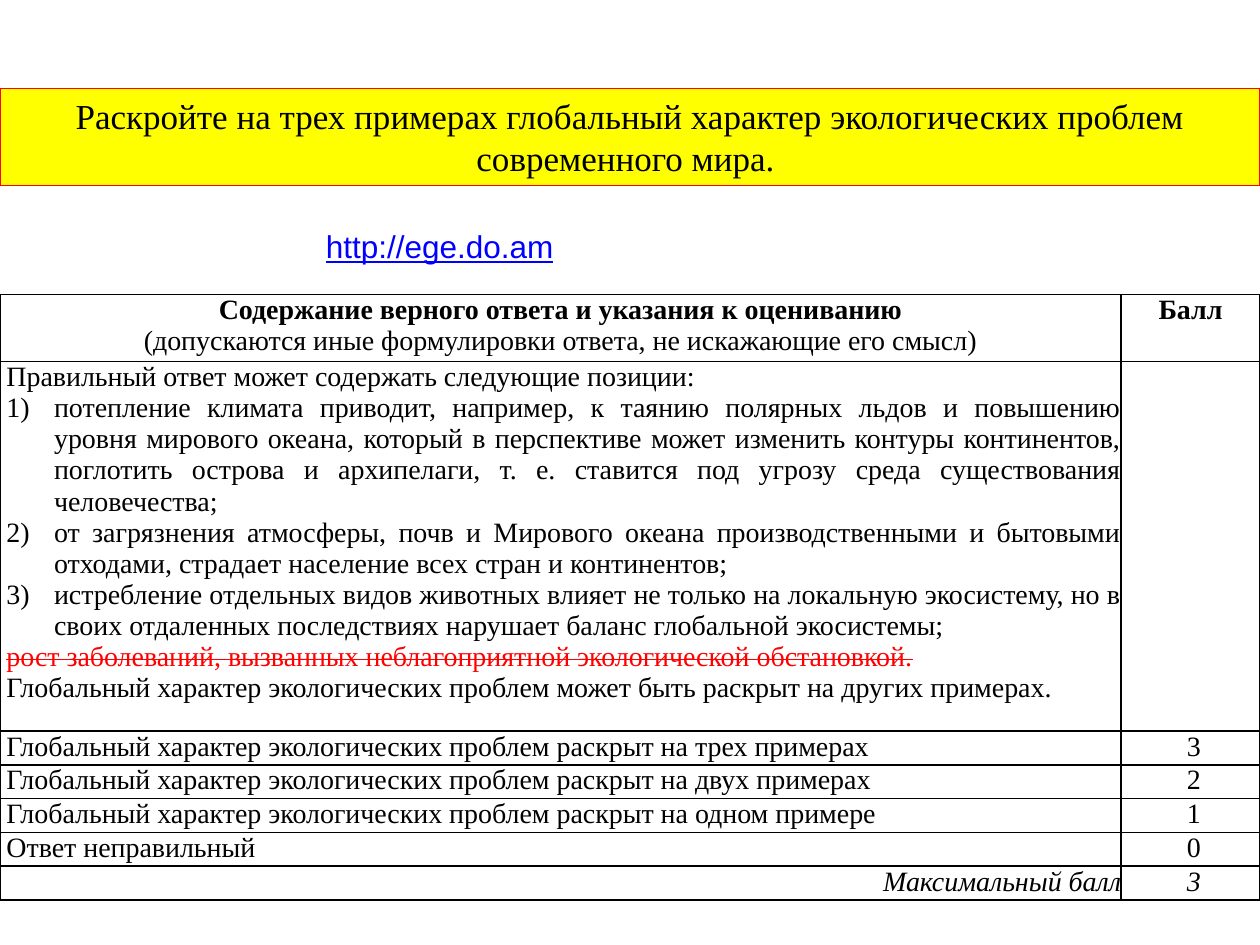
from lxml import etree
from pptx import Presentation
from pptx.dml.color import RGBColor
from pptx.enum.shapes import MSO_SHAPE
from pptx.enum.text import MSO_ANCHOR, MSO_AUTO_SIZE, PP_ALIGN
from pptx.oxml.ns import qn
from pptx.util import Cm, Pt

RECTANGLE = MSO_SHAPE.RECTANGLE
MIDDLE = MSO_ANCHOR.MIDDLE
FIT_SHAPE = MSO_AUTO_SIZE.SHAPE_TO_FIT_TEXT
LEFT, CENTER, RIGHT, JUSTIFY = (
    PP_ALIGN.LEFT, PP_ALIGN.CENTER, PP_ALIGN.RIGHT, PP_ALIGN.JUSTIFY)

COLORS = {"ink": "000000", "banner": "FFFF00", "accent": "FF0000", "link": "0000FF"}
SERIF, SANS = "Times New Roman", "Arial"
SLIDE_WIDTH, SLIDE_HEIGHT = Cm(25.4), Cm(19.05)

TASK = ("Раскройте на трех примерах глобальный характер "
        "экологических проблем современного мира. ")
POSITIONS = [
    "потепление климата приводит, например, к таянию полярных льдов и повышению "
    "уровня мирового океана, который в перспективе может изменить контуры континентов, "
    "поглотить острова и архипелаги, т. е. ставится под угрозу среда существования "
    "человечества;",
    "от загрязнения атмосферы, почв и Мирового океана производственными и бытовыми "
    "отходами, страдает население всех стран и континентов;",
    "истребление отдельных видов животных влияет не только на локальную экосистему, "
    "но в своих отдаленных последствиях нарушает баланс глобальной экосистемы; ",
]
REVEALED = "Глобальный характер экологических проблем раскрыт на "
GRADES = [
    (REVEALED + "трех примерах", "3"),
    (REVEALED + "двух примерах", "2"),
    (REVEALED + "одном примере", "1"),
    ("Ответ неправильный", "0"),
]


def rgb(name):
    return RGBColor.from_string(COLORS[name])


def add_run(paragraph, text, size=16, face=SERIF, color="ink",
            bold=False, italic=False, underline=False, strike=False):
    run = paragraph.add_run()
    run.text = text
    font = run.font
    font.size, font.name = Pt(size), face
    font.bold, font.italic, font.underline = bold, italic, underline
    font.color.rgb = rgb(color)
    if strike:
        run._r.get_or_add_rPr().set("strike", "sngStrike")


def add_line(frame, text, align=LEFT, numbered=False, **style):
    paragraph = frame.paragraphs[0]
    if paragraph.runs:
        paragraph = frame.add_paragraph()
    paragraph.alignment = align
    if numbered:
        properties = paragraph._p.get_or_add_pPr()
        properties.set("marL", str(Cm(0.96)))
        properties.set("indent", str(-Cm(0.96)))
        etree.SubElement(properties, qn("a:buAutoNum"), type="arabicParenR")
    add_run(paragraph, text, **style)


def format_cell(cell, right_margin):
    cell.margin_left, cell.margin_right = Cm(0.13), right_margin
    cell.margin_top = cell.margin_bottom = 0
    properties = cell._tc.get_or_add_tcPr()
    for side in ("a:lnL", "a:lnR", "a:lnT", "a:lnB"):
        border = etree.SubElement(properties, qn(side), w=str(Pt(1)))
        fill = etree.SubElement(border, qn("a:solidFill"))
        etree.SubElement(fill, qn("a:srgbClr"), val=COLORS["ink"])
    cell.fill.background()


def add_criteria(slide):
    heights = [Cm(1.35), Cm(7.45)] + [Cm(0.68)] * (len(GRADES) + 1)
    table = slide.shapes.add_table(
        len(heights), 2, 0, Cm(5.94), SLIDE_WIDTH, sum(heights)).table
    table.first_row = table.horz_banding = False
    table.columns[0].width = Cm(22.6)
    table.columns[1].width = SLIDE_WIDTH - Cm(22.6)
    for index, (row, height) in enumerate(zip(table.rows, heights)):
        row.height = height
        for cell in row.cells:
            format_cell(cell, 0 if index else Cm(0.13))

    heading = table.cell(0, 0).text_frame
    add_line(heading, "Содержание верного ответа и указания к оцениванию", CENTER, bold=True)
    add_line(heading, "(допускаются иные формулировки ответа, не искажающие его смысл)", CENTER)
    add_line(table.cell(0, 1).text_frame, "Балл", CENTER, bold=True)

    answer = table.cell(1, 0).text_frame
    add_line(answer, "Правильный ответ может содержать следующие позиции:")
    for position in POSITIONS:
        add_line(answer, position, JUSTIFY, numbered=True)
    add_line(answer, "рост заболеваний, вызванных неблагоприятной экологической обстановкой.",
             color="accent", strike=True)
    add_line(answer, "Глобальный характер экологических проблем может быть раскрыт "
                     "на других примерах.")

    for index, (criterion, score) in enumerate(GRADES, start=2):
        add_line(table.cell(index, 0).text_frame, criterion)
        add_line(table.cell(index, 1).text_frame, score, CENTER)
    last = len(heights) - 1
    add_line(table.cell(last, 0).text_frame, "Максимальный балл", RIGHT, italic=True)
    add_line(table.cell(last, 1).text_frame, "3", CENTER, italic=True)


def add_task(slide):
    banner = slide.shapes.add_shape(RECTANGLE, 0, Cm(1.78), SLIDE_WIDTH, Cm(1.96))
    banner.shadow.inherit = False
    banner.fill.solid()
    banner.fill.fore_color.rgb = rgb("banner")
    banner.line.color.rgb = rgb("accent")
    banner.line.width = Pt(0.75)
    frame = banner.text_frame
    frame.word_wrap = True
    frame.auto_size = FIT_SHAPE
    frame.vertical_anchor = MIDDLE
    add_line(frame, TASK, CENTER, size=20)


def add_site(slide):
    site = slide.shapes.add_textbox(Cm(6.32), Cm(4.45), Cm(5.33), Cm(1.02))
    frame = site.text_frame
    frame.word_wrap = False
    frame.auto_size = FIT_SHAPE
    add_line(frame, "http://ege.do.am", size=18, face=SANS, color="link", underline=True)
    add_run(frame.paragraphs[0], " ", size=18, face=SANS)


def main():
    deck = Presentation()
    deck.slide_width, deck.slide_height = SLIDE_WIDTH, SLIDE_HEIGHT
    slide = deck.slides.add_slide(deck.slide_layouts[6])
    add_criteria(slide)
    add_task(slide)
    add_site(slide)
    deck.save("out.pptx")


if __name__ == "__main__":
    main()
